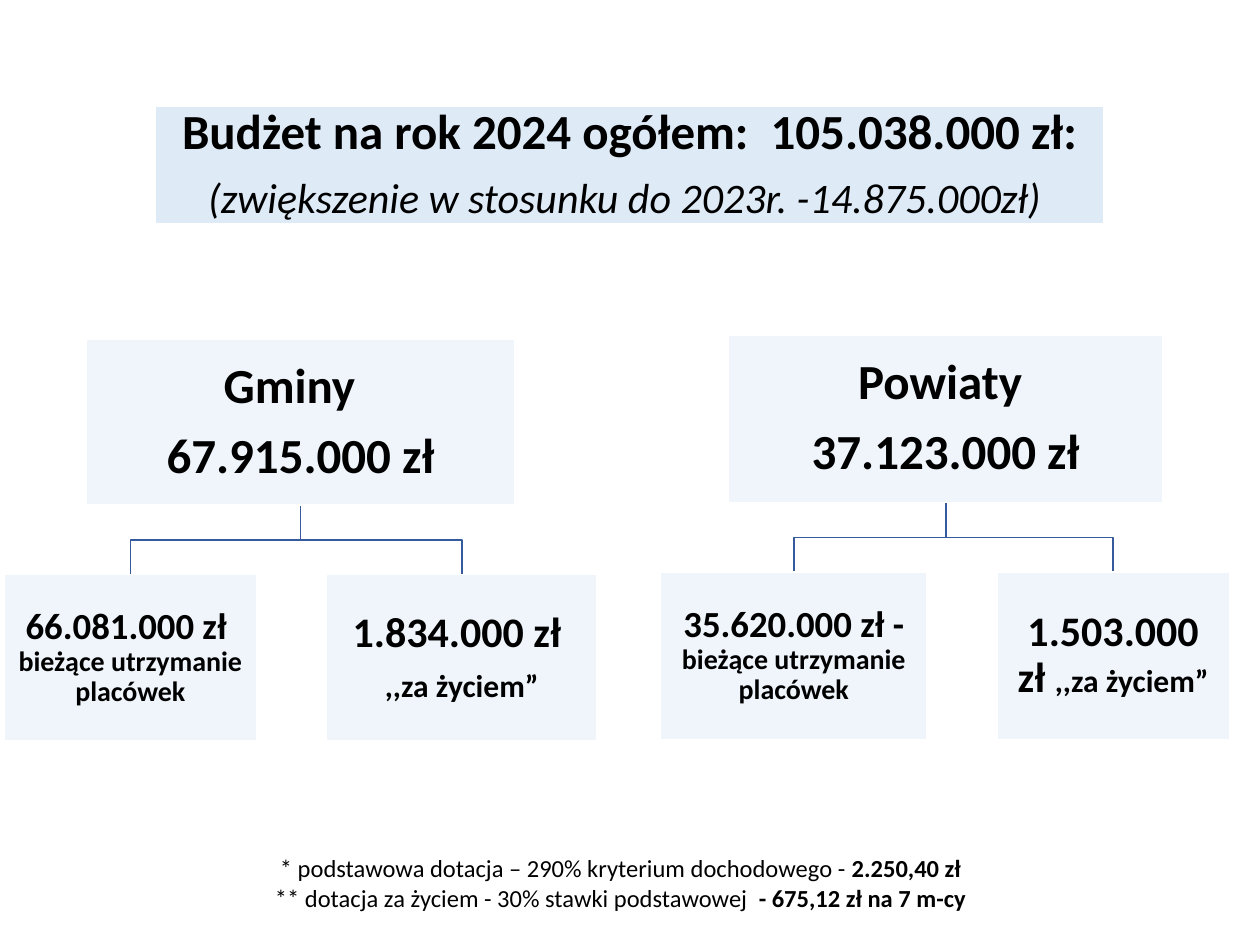
from dataclasses import dataclass

from pptx import Presentation
from pptx.dml.color import RGBColor
from pptx.enum.shapes import MSO_SHAPE as Preset
from pptx.enum.text import MSO_ANCHOR as Anchor, MSO_AUTO_SIZE as AutoSize, PP_ALIGN as Align
from pptx.util import Inches, Pt


@dataclass(frozen=True)
class Theme:
    font: str = "Calibri"
    ink: RGBColor = RGBColor(0x00, 0x00, 0x00)
    edge: RGBColor = RGBColor(0xFF, 0xFF, 0xFF)
    banner: RGBColor = RGBColor(0xDE, 0xEB, 0xF7)
    box: RGBColor = RGBColor(0xEF, 0xF5, 0xFB)
    link: RGBColor = RGBColor(0x36, 0x5B, 0x9D)
    heading: int = 28
    amount: int = 24
    running_cost: int = 21
    label: int = 18
    detail: int = 16
    note: int = 14


@dataclass(frozen=True)
class Run:
    text: str
    size: int
    bold: bool = True
    italic: bool = False


@dataclass(frozen=True)
class Area:
    """A rectangle in grid columns and rows."""
    col: float
    row: float
    cols: float
    rows: float

    def emu(self) -> tuple[int, int, int, int]:
        return x(self.col), y(self.row), x(self.cols), y(self.rows)

    @property
    def middle(self) -> float:
        return self.col + self.cols / 2

    @property
    def bottom(self) -> float:
        return self.row + self.rows


@dataclass(frozen=True)
class Child:
    col: float
    cols: float
    lines: list[list[Run]]
    inset: float = 0.02


@dataclass(frozen=True)
class Branch:
    area: Area
    lines: list[list[Run]]
    children: list[Child]


THEME = Theme()
WIDTH, HEIGHT = Inches(10), Inches(7.5)
COLUMNS, ROWS = 100, 75
LINK_ROWS = 5.5


def x(cols: float) -> int:
    return round(WIDTH * cols / COLUMNS)


def y(rows: float) -> int:
    return round(HEIGHT * rows / ROWS)


def write(frame, lines: list[list[Run]], *, inset: float = 0.02,
          line_spacing: float = 0.9, after: float = 0.35) -> None:
    """Fill a text frame; space after is a share of the type size."""
    frame.word_wrap = True
    frame.auto_size = AutoSize.NONE
    frame.vertical_anchor = Anchor.MIDDLE
    frame.margin_left = frame.margin_right = Inches(inset)
    frame.margin_top = frame.margin_bottom = Inches(inset)
    for number, line in enumerate(lines):
        paragraph = frame.add_paragraph() if number else frame.paragraphs[0]
        paragraph.alignment = Align.CENTER
        paragraph.line_spacing = line_spacing
        paragraph.space_before = Pt(0)
        paragraph.space_after = Pt(after * line[0].size)
        for part in line:
            run = paragraph.add_run()
            run.text = part.text
            font = run.font
            font.name, font.size = THEME.font, Pt(part.size)
            font.bold, font.italic = part.bold, part.italic
            font.color.rgb = THEME.ink


def paint(shape, fill: RGBColor) -> None:
    shape.fill.solid()
    shape.fill.fore_color.rgb = fill
    shape.line.color.rgb = THEME.edge
    shape.line.width = Pt(1)


def draw_box(slide, area: Area, lines: list[list[Run]], inset: float = 0.02) -> None:
    box = slide.shapes.add_shape(Preset.RECTANGLE, *area.emu())
    box.shadow.inherit = False
    paint(box, THEME.box)
    write(box.text_frame, lines, inset=inset)


def draw_link(slide, parent: Area, child: Area) -> None:
    bend = (parent.bottom + child.row) / 2
    builder = slide.shapes.build_freeform(x(parent.middle), y(parent.bottom))
    corners = [(parent.middle, bend), (child.middle, bend), (child.middle, child.row)]
    builder.add_line_segments([(x(col), y(row)) for col, row in corners], close=False)
    link = builder.convert_to_shape()
    link.shadow.inherit = False
    link.fill.background()
    link.line.color.rgb = THEME.link
    link.line.width = Pt(1)


def draw_branch(slide, branch: Branch) -> None:
    parent = branch.area
    areas = [Area(child.col, parent.bottom + LINK_ROWS, child.cols, parent.rows)
             for child in branch.children]
    for area in areas:
        draw_link(slide, parent, area)
    draw_box(slide, parent, branch.lines)
    for child, area in zip(branch.children, areas):
        draw_box(slide, area, child.lines, child.inset)


def running_costs(amount: str) -> list[list[Run]]:
    return [[Run(amount, THEME.running_cost),
             Run("bieżące utrzymanie placówek", THEME.detail)]]


FOR_LIFE = Run(",,za życiem”", THEME.label)

BUDGET = [
    [Run("Budżet na rok 2024 ogółem:  105.038.000 zł:", THEME.heading)],
    [Run("(zwiększenie w stosunku do 2023r. -14.875.000zł) ", THEME.amount,
         bold=False, italic=True)],
]

BRANCHES = [
    Branch(
        Area(6.8, 26.9, 34.1, 13.2),
        [[Run("Gminy  ", THEME.heading)], [Run("67.915.000 zł", THEME.heading)]],
        [Child(0.3, 20.1, running_costs("66.081.000 zł  "), inset=0.01),
         Child(25.9, 21.5, [[Run("1.834.000 zł ", THEME.amount)], [FOR_LIFE]])],
    ),
    Branch(
        Area(57.8, 26.6, 34.5, 13.3),
        [[Run("Powiaty ", THEME.heading)], [Run("37.123.000 zł", THEME.heading)]],
        [Child(52.4, 21.2, running_costs("35.620.000 zł - "), inset=0.01),
         Child(79.1, 18.5, [[Run("1.503.000 zł ", THEME.amount), FOR_LIFE]])],
    ),
]

NOTES = [
    [Run("* podstawowa dotacja – 290% kryterium dochodowego - ", THEME.note, bold=False),
     Run("2.250,40 zł", THEME.note)],
    [Run("** dotacja za życiem - 30% stawki podstawowej  ", THEME.note, bold=False),
     Run("- 675,12 zł na 7 m-cy", THEME.note)],
]


def main() -> None:
    deck = Presentation()
    deck.slide_width, deck.slide_height = WIDTH, HEIGHT
    slide = deck.slides.add_slide(deck.slide_layouts[5])

    # Total budget
    budget = slide.shapes.title
    budget.left, budget.top, budget.width, budget.height = Area(12.3, 8.4, 75.3, 9.4).emu()
    paint(budget, THEME.banner)
    write(budget.text_frame, BUDGET)

    # Split into municipalities and counties
    for branch in BRANCHES:
        draw_branch(slide, branch)

    # Footnotes
    notes = slide.shapes.add_textbox(*Area(6.3, 67.2, 85.9, 5.7).emu())
    write(notes.text_frame, NOTES, inset=0.05, line_spacing=1, after=0)

    deck.save("out.pptx")


if __name__ == "__main__":
    main()
